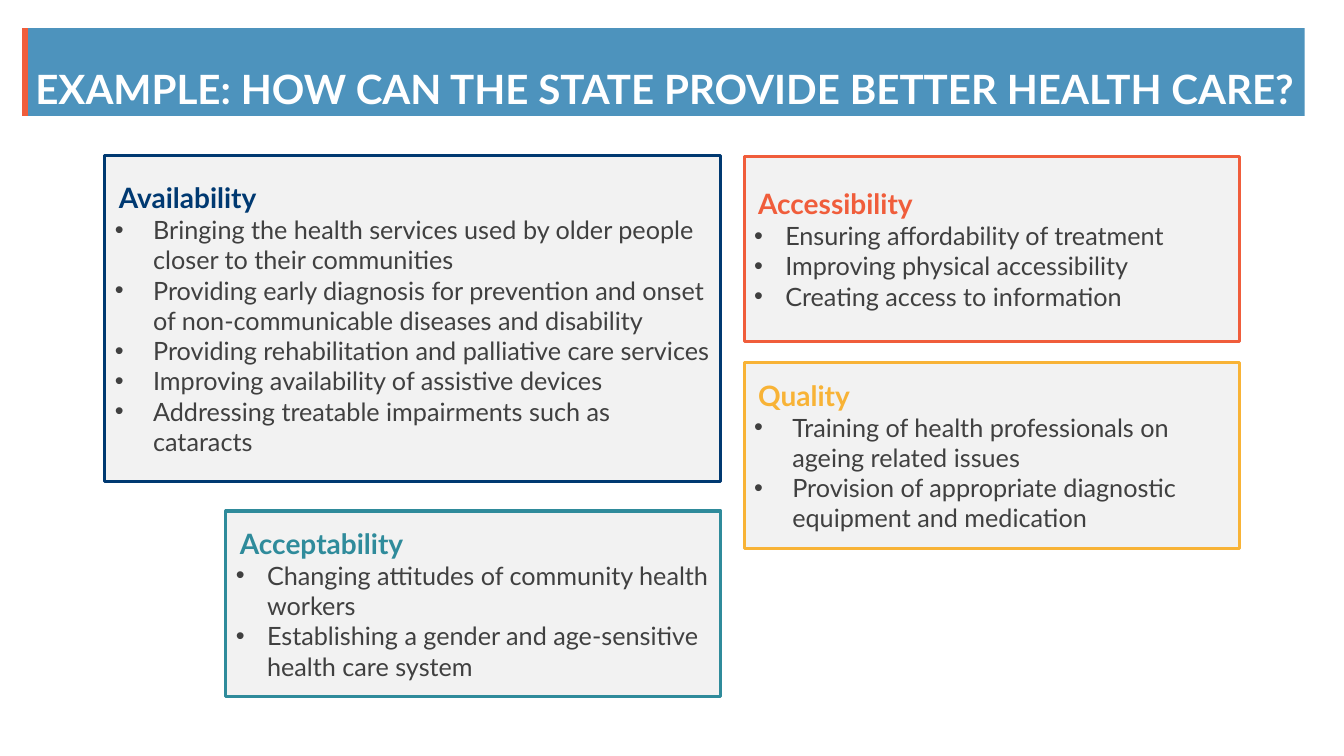
from lxml.etree import SubElement
from pptx import Presentation
from pptx.dml.color import RGBColor
from pptx.enum.shapes import MSO_CONNECTOR, MSO_SHAPE
from pptx.enum.text import MSO_ANCHOR, MSO_AUTO_SIZE, PP_ALIGN
from pptx.oxml.ns import qn
from pptx.util import Inches, Pt

FONT = "Lato"
TITLE = "EXAMPLE: HOW CAN THE STATE PROVIDE BETTER HEALTH CARE?"
BAND_LEFT, BAND_TOP, BAND_WIDTH, BAND_HEIGHT = 0.25, 0.28, 12.69, 0.87
TITLE_TOP = 0.3
LEFT_COLUMN_RIGHT, RIGHT_COLUMN_LEFT = 7.15, 7.38
WIDE, NARROW = 6.11, 4.91
TALL, SHORT = 3.24, 1.84

TOPICS = [
    ("Availability", "003971", 0.38, (LEFT_COLUMN_RIGHT - WIDE, 1.54, WIDE, TALL), [
        "Bringing the health services used by older people closer to their communities",
        "Providing early diagnosis for prevention and onset of non-communicable diseases and disability",
        "Providing rehabilitation and palliative care services",
        "Improving availability of assistive devices",
        "Addressing treatable impairments such as cataracts",
    ]),
    ("Accessibility", "F05D3B", 0.31, (RIGHT_COLUMN_LEFT, 1.55, NARROW, SHORT), [
        "Ensuring affordability of treatment",
        "Improving physical accessibility",
        "Creating access to information",
    ]),
    ("Acceptability", "2F8B9B", 0.31, (LEFT_COLUMN_RIGHT - NARROW, 5.07, NARROW, SHORT), [
        "Changing attitudes of community health workers",
        "Establishing a gender and age-sensitive health care system",
    ]),
    ("Quality", "F8B336", 0.38, (RIGHT_COLUMN_LEFT, 3.6, NARROW, SHORT), [
        "Training of health professionals on ageing related issues",
        "Provision of appropriate diagnostic equipment and medication",
    ]),
]


def color(value):
    return RGBColor.from_string(value)


def format_paragraph(paragraph, text, size, ink, bold):
    paragraph.text = text
    paragraph.alignment = PP_ALIGN.LEFT
    paragraph.font.name = FONT
    paragraph.font.size = Pt(size)
    paragraph.font.bold = bold
    paragraph.font.color.rgb = color(ink)


def indent(paragraph, margin, hanging=0):
    properties = paragraph._p.get_or_add_pPr()
    properties.set("marL", str(Inches(margin)))
    properties.set("indent", str(-Inches(hanging)))
    if hanging:
        SubElement(properties, qn("a:buFont")).set("typeface", "Arial")
        SubElement(properties, qn("a:buChar")).set("char", "•")


def add_rectangle(page, place, fill):
    box = page.shapes.add_shape(MSO_SHAPE.RECTANGLE, *map(Inches, place))
    box.shadow.inherit = False
    box.fill.solid()
    box.fill.fore_color.rgb = color(fill)
    return box


def add_title(page):
    band = add_rectangle(page, (BAND_LEFT, BAND_TOP, BAND_WIDTH, BAND_HEIGHT), "0266A2")
    band.line.fill.background()
    fill_color = band.fill._xPr.find(qn("a:solidFill"))[0]
    SubElement(fill_color, qn("a:alpha")).set("val", "70000")

    accent = page.shapes.add_connector(
        MSO_CONNECTOR.STRAIGHT, Inches(BAND_LEFT), Inches(BAND_TOP),
        Inches(BAND_LEFT), Inches(BAND_TOP + BAND_HEIGHT))
    accent.line.color.rgb = color("F05D3B")
    accent.line.width = Pt(4)
    SubElement(accent.element.spPr, qn("a:effectLst"))

    title = page.shapes.title
    title.left, title.top = Inches(BAND_LEFT), Inches(TITLE_TOP)
    title.width, title.height = Inches(BAND_WIDTH), Inches(BAND_HEIGHT)
    frame = title.text_frame
    frame.auto_size = MSO_AUTO_SIZE.NONE
    frame.word_wrap = True
    frame.vertical_anchor = MSO_ANCHOR.BOTTOM
    frame.margin_right = Inches(0.05)
    format_paragraph(frame.paragraphs[0], TITLE, 28.8, "FFFFFF", True)
    frame.paragraphs[0].line_spacing = 0.9
    page.shapes.element.append(title.element)


def add_topic(page, heading, accent, hanging, place, points):
    box = add_rectangle(page, place, "F2F2F2")
    box.line.color.rgb = color(accent)
    box.line.width = Pt(2.25)
    frame = box.text_frame
    frame.word_wrap = True
    frame.vertical_anchor = MSO_ANCHOR.MIDDLE
    format_paragraph(frame.paragraphs[0], heading, 20, accent, True)
    indent(frame.paragraphs[0], 0.04)
    for point in points:
        paragraph = frame.add_paragraph()
        format_paragraph(paragraph, point, 18, "404040", False)
        indent(paragraph, hanging, hanging)


def main():
    deck = Presentation()
    deck.slide_width, deck.slide_height = Inches(13.33), Inches(7.5)
    page = deck.slides.add_slide(deck.slide_layouts[5])
    add_title(page)
    for topic in TOPICS:
        add_topic(page, *topic)
    deck.save("out.pptx")


if __name__ == "__main__":
    main()
